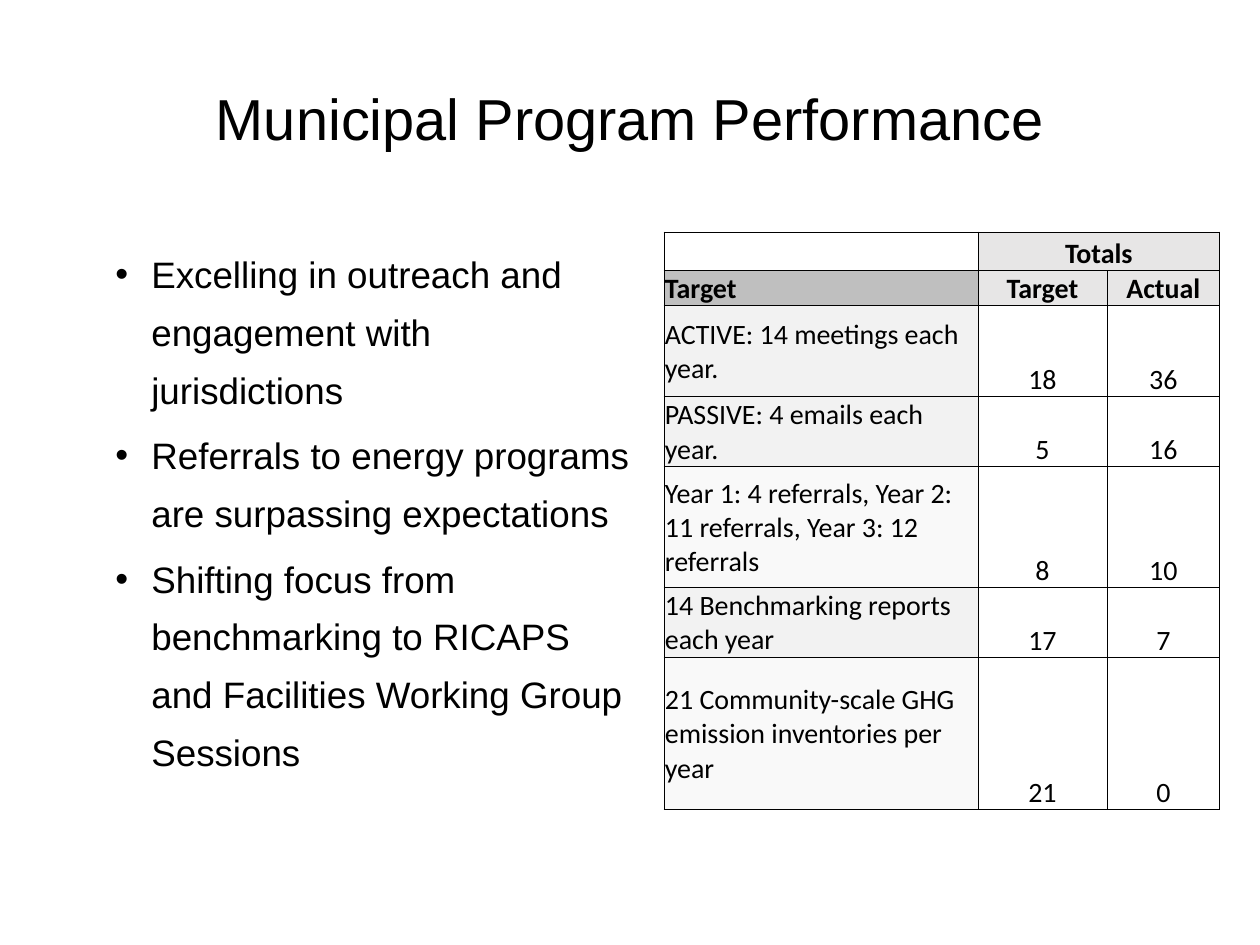
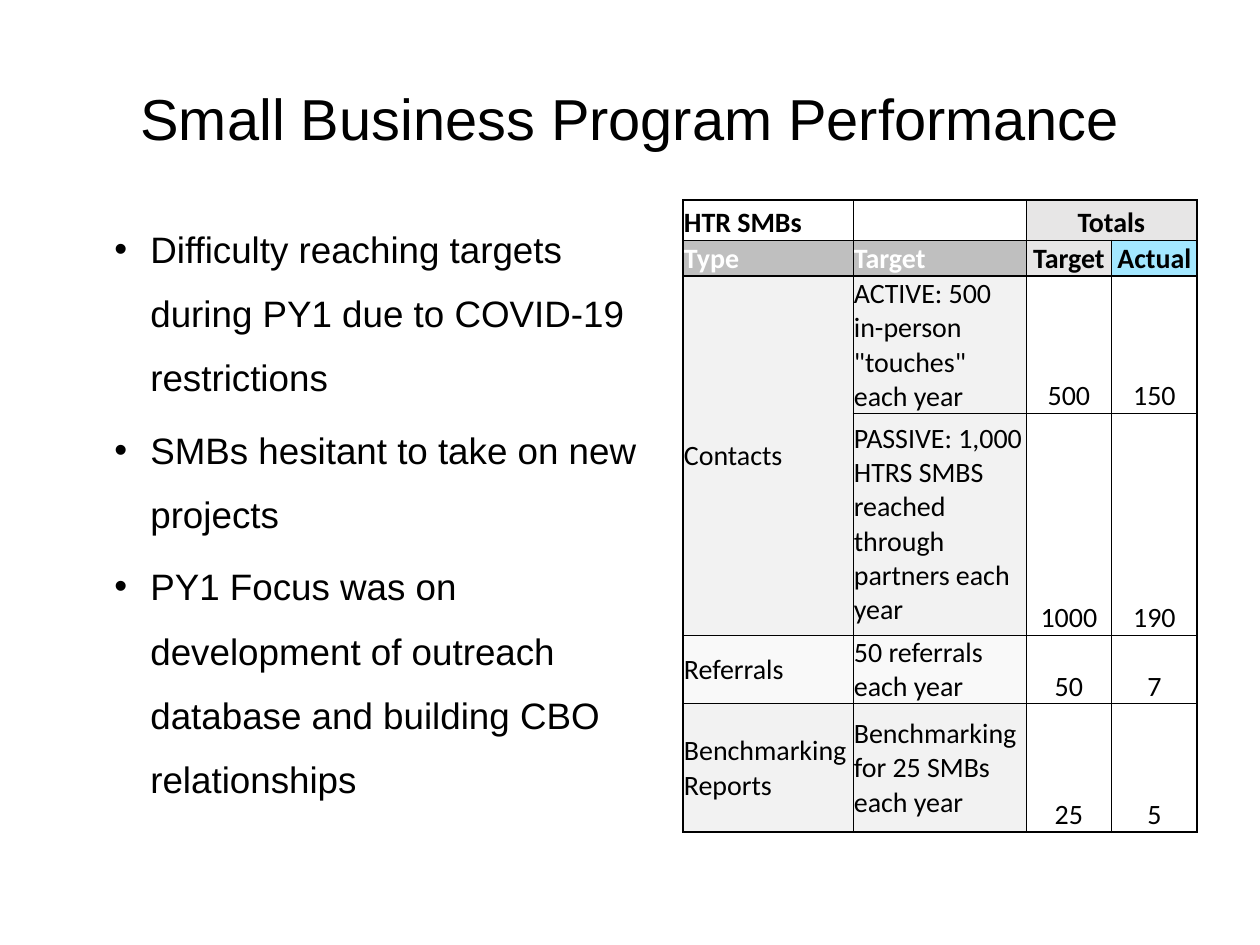
from lxml import etree
from pptx import Presentation
from pptx import util as u
from pptx.dml.color import RGBColor
from pptx.enum import text as t
from pptx.oxml.ns import qn

PX = 914400 // 126
BLACK, WHITE = "000000", "FFFFFF"
HEAD, GREY, BLUE = "E7E6E6", "BFBFBF", "A3E7FF"
PALE, FAINT = "F2F2F2", "F9F9F9"
MID, LOW = t.MSO_ANCHOR.MIDDLE, t.MSO_ANCHOR.BOTTOM


def add_run(par, words, size, face, color=BLACK, bold=False):
    run = par.add_run()
    run.text = words
    font = run.font
    font.size, font.name, font.bold = u.Pt(size), face, bold
    font.color.rgb = RGBColor.from_string(color)


def add_edge(cell, side, width):
    """Draw one border; side is L, R, T or B."""
    line = etree.SubElement(cell._tc.get_or_add_tcPr(), qn("a:ln" + side),
                            w=str(u.Pt(width)))
    fill = etree.SubElement(line, qn("a:solidFill"))
    etree.SubElement(fill, qn("a:srgbClr"), val=BLACK)


# Each row: height, label fill, label colour, texts, fills of the two totals.
# None marks a cell that a merge covers.
slides = [
    dict(
        title="Municipal Program Performance",
        box=(103, 232, 541, 738), lead=u.Pt(33),
        points=["Excelling in outreach and engagement with jurisdictions",
                "Referrals to energy programs are surpassing expectations",
                "Shifting focus from benchmarking to RICAPS and Facilities "
                "Working Group Sessions"],
        spot=(664, 232), cols=[314, 129, 113],
        merge=[(0, 1, 0, 2)], thick=0.5,
        rows=[
            (35, None, BLACK, ["", "Totals", None], [HEAD, HEAD]),
            (35, GREY, BLACK, ["Target", "Target", "Actual"], [HEAD, HEAD]),
            (91, PALE, BLACK,
             ["ACTIVE: 14 meetings each year.", "18", "36"], [None, None]),
            (70, PALE, BLACK,
             ["PASSIVE: 4 emails each year.", "5", "16"], [None, None]),
            (121, FAINT, BLACK,
             ["Year 1: 4 referrals, Year 2: 11 referrals, Year 3: 12 referrals",
              "8", "10"], [None, None]),
            (70, PALE, BLACK,
             ["14 Benchmarking reports each year", "17", "7"], [None, None]),
            (152, FAINT, BLACK,
             ["21 Community-scale GHG emission inventories per year",
              "21", "0"], [None, None]),
        ]),
    dict(
        title="Small Business Program Performance",
        box=(102, 200, 557, 624), lead=1.46,
        points=["Difficulty reaching targets during PY1 due to COVID-19 "
                "restrictions",
                "SMBs hesitant to take on new projects",
                "PY1 Focus was on development of outreach database and "
                "building CBO relationships"],
        spot=(683, 200), cols=[170, 173, 86, 85],
        merge=[(0, 2, 0, 3), (2, 0, 3, 0)], thick=1,
        rows=[
            (40, None, BLACK, ["HTR SMBs", "", "Totals", None], [HEAD, HEAD]),
            (36, GREY, WHITE,
             ["Type", "Target", "Target", "Actual"], [HEAD, BLUE]),
            (137, PALE, BLACK,
             ["Contacts", 'ACTIVE: 500 in-person "touches" each year',
              "500", "150"], [None, None]),
            (222, PALE, BLACK,
             [None, "PASSIVE: 1,000 HTRS SMBS reached through partners "
              "each year", "1000", "190"], [None, None]),
            (69, FAINT, BLACK,
             ["Referrals", "50 referrals each year", "50", "7"], [None, None]),
            (128, PALE, BLACK,
             ["Benchmarking Reports", "Benchmarking for 25 SMBs each year",
              "25", "5"], [None, None]),
        ]),
]

deck = Presentation()
deck.slide_width, deck.slide_height = 1260 * PX, 945 * PX

for data in slides:
    slide = deck.slides.add_slide(deck.slide_layouts[6])

    # Title
    frame = slide.shapes.add_textbox(
        63 * PX, 38 * PX, 1134 * PX, 158 * PX).text_frame
    frame.word_wrap, frame.vertical_anchor = True, MID
    par = frame.paragraphs[0]
    par.alignment = t.PP_ALIGN.CENTER
    add_run(par, data["title"], 33, "Arial")

    # Table of targets
    cols, rows = data["cols"], data["rows"]
    left, top = data["spot"]
    table = slide.shapes.add_table(
        len(rows), len(cols), left * PX, top * PX, sum(cols) * PX,
        sum(row[0] for row in rows) * PX).table
    table.first_row = table.horz_banding = False
    for col, width in zip(table.columns, cols):
        col.width = width * PX
    for r1, c1, r2, c2 in data["merge"]:
        table.cell(r1, c1).merge(table.cell(r2, c2))

    labels = len(cols) - 2
    thick_x, thick_y = {0, len(cols)}, {0, 2, len(rows)}
    for r, (height, fill, color, texts, tones) in enumerate(rows):
        table.rows[r].height = height * PX
        for c, (words, tone) in enumerate(zip(texts, [fill] * labels + tones)):
            cell = table.cell(r, c)
            wide = cell.span_width if cell.is_merge_origin else 1
            tall = cell.span_height if cell.is_merge_origin else 1
            cell.margin_left = cell.margin_right = cell.margin_top = PX
            cell.margin_bottom = 0
            label = c < labels
            cell.vertical_anchor = MID if label and r else LOW
            for side, heavy in (("L", c in thick_x),
                                ("R", c + wide in thick_x),
                                ("T", r in thick_y),
                                ("B", r + tall in thick_y)):
                add_edge(cell, side, data["thick"] if heavy else 0.5)
            if tone:
                cell.fill.solid()
                cell.fill.fore_color.rgb = RGBColor.from_string(tone)
            else:
                cell.fill.background()
            par = cell.text_frame.paragraphs[0]
            par.alignment = t.PP_ALIGN.LEFT if label else t.PP_ALIGN.CENTER
            add_run(par, words or "", 16, "Calibri",
                    color if label else BLACK, r < 2)

    # Bullet points
    frame = slide.shapes.add_textbox(*(n * PX for n in data["box"])).text_frame
    frame.word_wrap = True
    for i, point in enumerate(data["points"]):
        par = frame.add_paragraph() if i else frame.paragraphs[0]
        par.line_spacing = data["lead"]
        par.space_before = u.Pt(4.5 if i else 0)
        props = par._p.get_or_add_pPr()
        props.set("marL", str(36 * PX))
        props.set("indent", str(-36 * PX))
        etree.SubElement(props, qn("a:buFont"), typeface="Arial")
        etree.SubElement(props, qn("a:buChar"), char="•")
        add_run(par, point, 21, "Arial")

deck.save("out.pptx")
